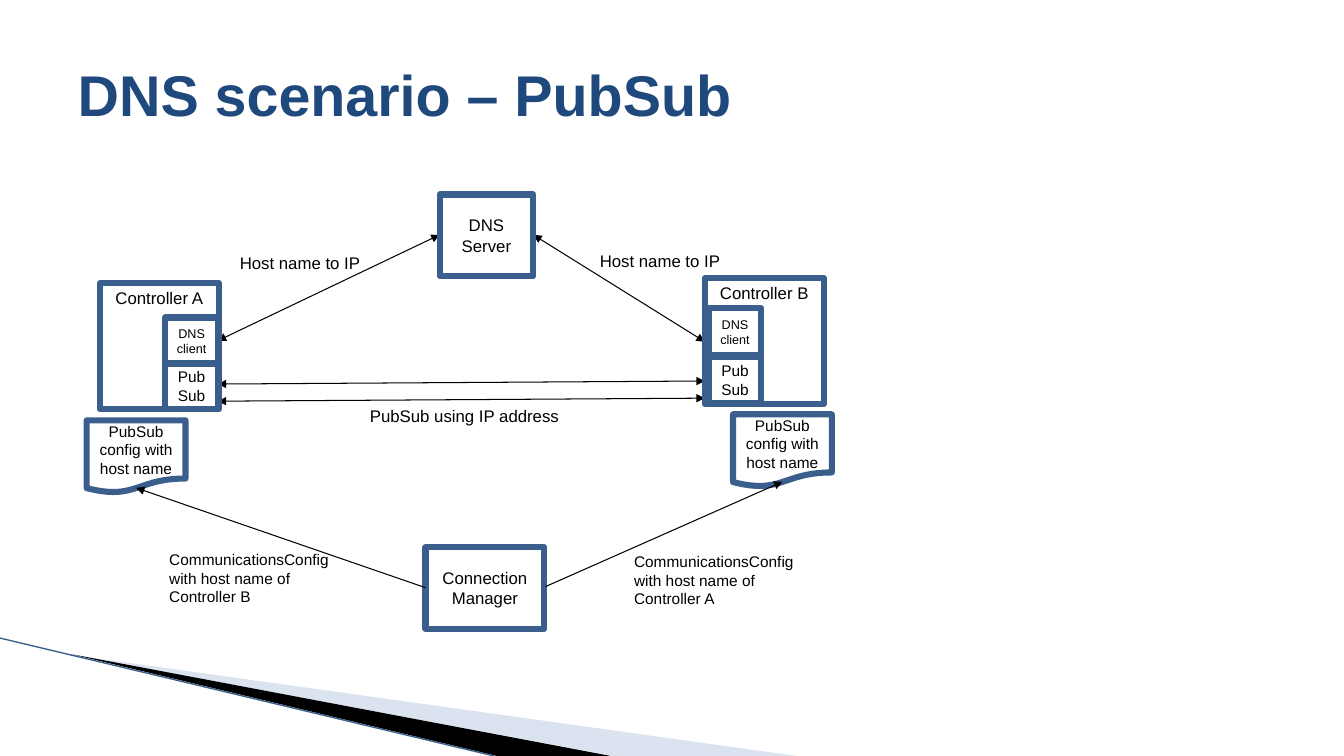
from lxml.etree import SubElement
from pptx import Presentation
from pptx.dml.color import RGBColor
from pptx.enum.shapes import MSO_CONNECTOR, MSO_SHAPE
from pptx.enum.text import MSO_ANCHOR, MSO_AUTO_SIZE, PP_ALIGN
from pptx.oxml.ns import qn
from pptx.util import Inches, Pt

COLORS = {"title": "1F497D", "border": "3A5F8C", "ink": "000000",
          "wedge": "A7B9DB"}


def rgb(name):
    return RGBColor.from_string(COLORS[name])


class Canvas:
    """Holds the style and the current slide."""
    font = "Arial"

    def __init__(self, deck):
        self.slide = deck.slides.add_slide(deck.slide_layouts[5])
        self.shapes = self.slide.shapes

    def fill_text(self, frame, text, size, color="ink", bold=False,
                  align=PP_ALIGN.LEFT):
        frame.text = text
        line = frame.paragraphs[0]
        line.alignment = align
        font = line.runs[0].font
        font.name, font.size, font.bold = self.font, Pt(size), bold
        font.color.rgb = rgb(color)

    def title(self, text, x, y, w, h):
        head = self.shapes.title
        head.left, head.top, head.width, head.height = map(Inches, (x, y, w, h))
        frame = head.text_frame
        frame.auto_size = MSO_AUTO_SIZE.NONE
        frame.vertical_anchor = MSO_ANCHOR.MIDDLE
        self.fill_text(frame, text, 41, "title", True)

    def box(self, text, x, y, w, h, size=12, kind=MSO_SHAPE.RECTANGLE,
            anchor=MSO_ANCHOR.MIDDLE):
        shape = self.shapes.add_shape(kind, *map(Inches, (x, y, w, h)))
        shape.shadow.inherit = False
        shape.fill.background()
        shape.line.color.rgb = rgb("border")
        shape.line.width = Pt(4.33)
        frame = shape.text_frame
        frame.word_wrap = True
        frame.vertical_anchor = anchor
        self.fill_text(frame, text, size, align=PP_ALIGN.CENTER)

    def label(self, text, x, y, w, h, size=12, wrap=False):
        frame = self.shapes.add_textbox(*map(Inches, (x, y, w, h))).text_frame
        frame.word_wrap = wrap
        frame.auto_size = MSO_AUTO_SIZE.SHAPE_TO_FIT_TEXT
        self.fill_text(frame, text, size)

    def line(self, start, end, color="ink", width=0.75, heads=()):
        link = self.shapes.add_connector(
            MSO_CONNECTOR.STRAIGHT, *map(Inches, (*start, *end)))
        link.line.color.rgb = rgb(color)
        link.line.width = Pt(width)
        props = link._element.spPr
        for tag in heads:
            SubElement(props.find(qn("a:ln")), qn(tag), type="triangle")
        SubElement(props, qn("a:effectLst"))

    def wedge(self, points, color, alpha=None):
        first, *rest = [tuple(map(Inches, point)) for point in points]
        maker = self.shapes.build_freeform(*first)
        maker.add_line_segments(rest, close=True)
        shape = maker.convert_to_shape()
        shape.shadow.inherit = False
        shape.line.fill.background()
        shape.fill.solid()
        shape.fill.fore_color.rgb = rgb(color)
        if alpha:
            tint = shape._element.spPr.find(".//" + qn("a:srgbClr"))
            SubElement(tint, qn("a:alpha"), val=str(alpha * 1000))


def main():
    deck = Presentation()
    deck.slide_width, deck.slide_height = Inches(13.33), Inches(7.5)
    page = Canvas(deck)
    both = ("a:headEnd", "a:tailEnd")
    tail = ("a:tailEnd",)

    # Corner decoration
    page.wedge([(0.73, 6.5), (7.9, 7.5), (6.08, 7.5)], "wedge", 40)
    page.wedge([(0.71, 6.49), (6.06, 7.5), (4.93, 7.5)], "ink")
    page.line((0, 6.33), (4.9, 7.5), "border", 0.95)

    page.title("DNS scenario – PubSub", 0.67, 0.3, 12, 1.25)

    # Traffic between the controllers and the DNS server
    page.line((2.16, 3.38), (4.36, 2.33), heads=both)
    page.line((6.99, 3.39), (5.29, 2.33), heads=both)
    for y in (3.81, 3.98):
        page.line((2.16, y), (6.99, y - 0.03), heads=both)
    page.label("Host name to IP", 2.28, 2.46, 1.41, 0.3)
    page.label("Host name to IP", 5.85, 2.44, 1.41, 0.3)
    page.label("PubSub using IP address", 3.57, 3.98, 2.09, 0.3)

    # Server and manager
    page.box("DNS Server", 4.36, 1.93, 0.93, 0.81)
    page.box("Connection Manager", 4.22, 5.43, 1.18, 0.81)

    # Controllers: name, corner, inner column, client and PubSub tops, document
    sides = [("A", 0.99, 2.81, 1.64, 3.15, 3.6, 0.86, 4.17),
             ("B", 6.99, 2.76, 7.03, 3.06, 3.54, 7.27, 4.11)]
    for name, x, y, inner, client, pubsub, doc_x, doc_y in sides:
        page.box(f"Controller {name}", x, y, 1.18, 1.25, anchor=MSO_ANCHOR.TOP)
        page.box("PubSub", inner, pubsub, 0.52, 0.46, 11)
        page.box("DNS client", inner, client, 0.52, 0.46, 9)
        page.box("PubSub config with host name", doc_x, doc_y, 0.98, 0.72, 11,
                 MSO_SHAPE.FLOWCHART_DOCUMENT)

    # Configuration sent to each side
    configs = [("B", 1.58, 5.41, (4.22, 5.83), (1.35, 4.84)),
               ("A", 6.19, 5.43, (5.41, 5.82), (7.76, 4.78))]
    for peer, x, y, start, end in configs:
        page.line(start, end, heads=tail)
        page.label(f"CommunicationsConfig with host name of Controller {peer}",
                   x, y, 1.86, 0.66, 11, True)

    deck.save("out.pptx")


if __name__ == "__main__":
    main()
